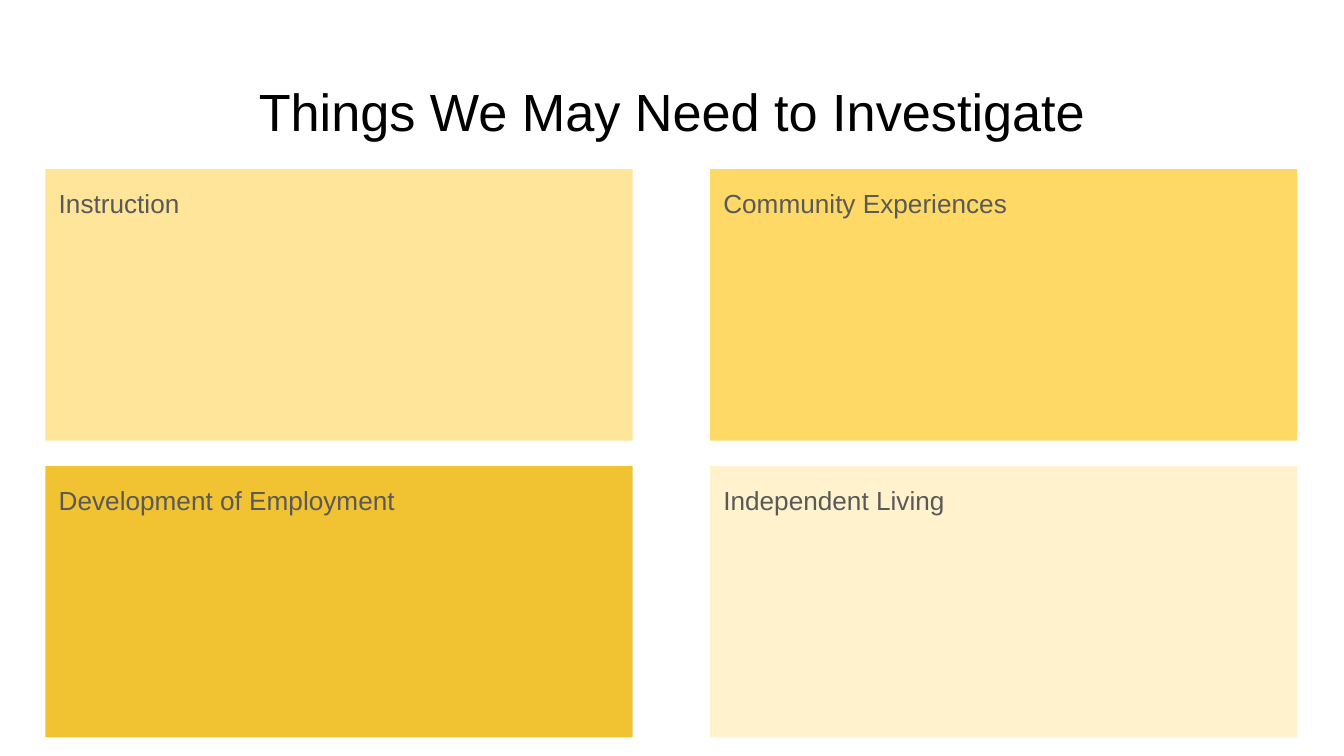
"""Build a slide with a title above four coloured topic panels."""
from pptx import Presentation
from pptx import util as u
from pptx.dml.color import RGBColor
from pptx.enum import shapes, text

BLACK = RGBColor(0x00, 0x00, 0x00)
GREY = RGBColor(0x59, 0x59, 0x59)
LIGHT_GOLD = RGBColor(0xFF, 0xE5, 0x99)
GOLD = RGBColor(0xFF, 0xD9, 0x66)
DARK_GOLD = RGBColor(0xF1, 0xC2, 0x32)
CREAM = RGBColor(0xFF, 0xF2, 0xCC)

LEFT, TOP = 0.86, 3.2
COLUMN_STEP, ROW_STEP = 12.56, 5.61
PANEL_WIDTH, PANEL_HEIGHT = 11.1, 5.13

FRAME_FORMAT = {
    "word_wrap": True,
    "vertical_anchor": text.MSO_ANCHOR.TOP,
    "margin_left": u.Cm(0.25),
    "margin_right": u.Cm(0.25),
    "margin_top": u.Cm(0.25),
    "margin_bottom": u.Cm(0.25),
}
TITLE_FORMAT = {"alignment": text.PP_ALIGN.CENTER}
PANEL_FORMAT = {"alignment": text.PP_ALIGN.LEFT, "line_spacing": 1.15}


def write(box, words, size, color, para_format):
    frame = box.text_frame
    for name, value in FRAME_FORMAT.items():
        setattr(frame, name, value)
    para = frame.paragraphs[0]
    for name, value in para_format.items():
        setattr(para, name, value)
    span = para.add_run()
    span.text = words
    for name, value in {"name": "Arial", "size": u.Pt(size)}.items():
        setattr(span.font, name, value)
    span.font.color.rgb = color


deck = Presentation()
deck.slide_width, deck.slide_height = u.Cm(25.4), u.Cm(14.29)
page = deck.slides.add_slide(deck.slide_layouts[6])

title = page.shapes.add_textbox(u.Cm(LEFT), u.Cm(1.24), u.Cm(23.67), u.Cm(1.6))
write(title, "Things We May Need to Investigate", 28, BLACK, TITLE_FORMAT)

panels = [
    ("Instruction", LIGHT_GOLD, 0, 0),
    ("Community Experiences", GOLD, 1, 0),
    ("Independent Living", CREAM, 1, 1),
    ("Development of Employment", DARK_GOLD, 0, 1),
]
for topic, fill, column, row in panels:
    panel = page.shapes.add_shape(
        shapes.MSO_SHAPE.RECTANGLE,
        u.Cm(LEFT + column * COLUMN_STEP),
        u.Cm(TOP + row * ROW_STEP),
        u.Cm(PANEL_WIDTH),
        u.Cm(PANEL_HEIGHT),
    )
    panel.shadow.inherit = False
    panel.fill.solid()
    panel.fill.fore_color.rgb = fill
    panel.line.fill.background()
    write(panel, topic, 14, GREY, PANEL_FORMAT)

deck.save("out.pptx")
